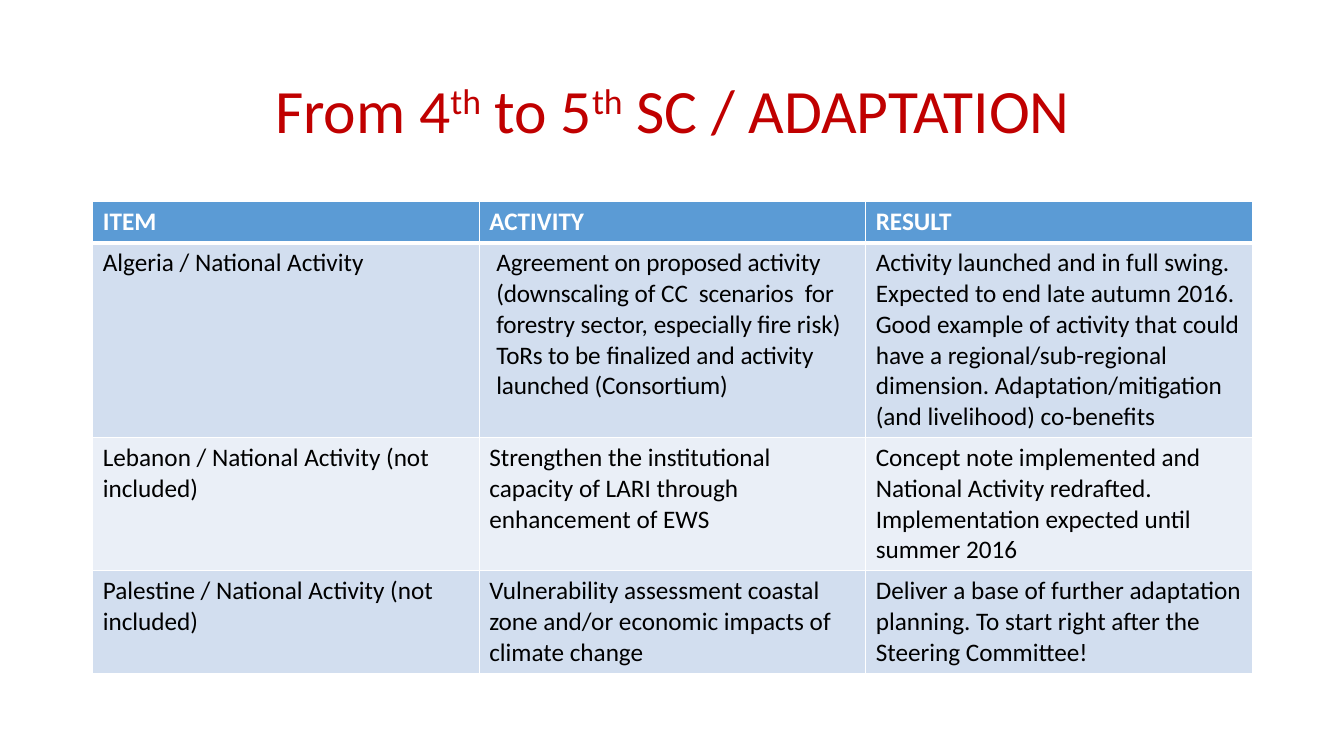
from lxml import etree
from pptx import Presentation
from pptx.dml.color import RGBColor
from pptx.enum.text import MSO_ANCHOR, PP_ALIGN
from pptx.oxml.ns import qn
from pptx.util import Inches, Pt

FONT = "Calibri"
RED = RGBColor(0xC0, 0x00, 0x00)
BLACK = RGBColor(0x00, 0x00, 0x00)
WHITE = RGBColor(0xFF, 0xFF, 0xFF)
HEADER_BLUE = RGBColor(0x5B, 0x9B, 0xD5)
BANDS = (RGBColor(0xEA, 0xEF, 0xF7), RGBColor(0xD2, 0xDE, 0xEF))
CENTER = PP_ALIGN.CENTER
MIDDLE = MSO_ANCHOR.MIDDLE
TITLE_ONLY = 5
TIGHT = -10  # hundredths of a point
RAISED = 30000  # thousandths of a percent

TITLE = [("From 4", 0), ("th", RAISED), (" to 5", 0), ("th", RAISED), (" SC / ADAPTATION", 0)]

# Each paragraph alternates between tight and normal letter spacing.
ALGERIA_ACTIVITY = [
    ["Agreement on proposed activity (downscaling ", "of ", "CC  scenarios  ", "for ",
     "forestry ", "sector, ", "especially fire ", "risk)"],
    ["ToRs to ", "be ", "finalized ", "and ", "activity launched (Consortium)"],
]
ROWS = [
    ("ITEM", "ACTIVITY", "RESULT"),
    ("Algeria / National Activity",
     ALGERIA_ACTIVITY,
     "Activity launched and in full swing. Expected to end late autumn 2016. "
     "Good example of activity that could have a regional/sub-regional dimension. "
     "Adaptation/mitigation (and livelihood) co-benefits"),
    ("Lebanon / National Activity (not included)",
     "Strengthen the institutional capacity of LARI through enhancement of EWS",
     "Concept note implemented and National Activity redrafted. "
     "Implementation expected until summer 2016"),
    ("Palestine / National Activity (not included)",
     "Vulnerability assessment coastal zone and/or economic impacts of climate change",
     "Deliver a base of further adaptation planning. "
     "To start right after the Steering Committee!"),
]
ROW_HEIGHTS = (0.41, 1.92, 1.32, 1.01)
LEFT, WIDTH = Inches(0.92), Inches(11.5)


def add_span(para, text, size, color, bold=False, spacing=0, baseline=0):
    span = para.add_run()
    span.text = text
    span.font.name = FONT
    span.font.size = Pt(size)
    span.font.bold = bold
    span.font.color.rgb = color
    properties = span._r.get_or_add_rPr()
    if spacing:
        properties.set("spc", str(spacing))
    if baseline:
        properties.set("baseline", str(baseline))


def add_borders(cell, is_header, below_header):
    """White rules on all sides, thicker under the header row."""
    properties = cell._tc.get_or_add_tcPr()
    widths = {"L": 1, "R": 1, "T": 3 if below_header else 1, "B": 3 if is_header else 1}
    for side, width in widths.items():
        line = etree.SubElement(properties, qn(f"a:ln{side}"), w=str(Pt(width)))
        fill = etree.SubElement(line, qn("a:solidFill"))
        etree.SubElement(fill, qn("a:srgbClr"), val=str(WHITE))


def fill_cell(cell, content, row):
    is_header = row == 0
    add_borders(cell, is_header, row == 1)
    cell.fill.solid()
    cell.fill.fore_color.rgb = HEADER_BLUE if is_header else BANDS[row % 2]
    frame = cell.text_frame
    if isinstance(content, str):
        add_span(frame.paragraphs[0], content, 18, WHITE if is_header else BLACK, is_header)
        return
    for number, parts in enumerate(content):
        para = frame.add_paragraph() if number else frame.paragraphs[0]
        para._p.get_or_add_pPr().set("marL", str(Inches(0.07)))
        if number == 0:
            para.space_before = Pt(0.3)
        for index, text in enumerate(parts):
            add_span(para, text, 18, BLACK, spacing=0 if index % 2 else TIGHT)


def add_title(slide):
    title = slide.shapes.title
    title.left, title.top, title.width, title.height = LEFT, Inches(0.4), WIDTH, Inches(1.45)
    title.text_frame.vertical_anchor = MIDDLE
    para = title.text_frame.paragraphs[0]
    para.alignment = CENTER
    para.line_spacing = 0.9
    for text, baseline in TITLE:
        add_span(para, text, 44, RED, spacing=TIGHT, baseline=baseline)


def add_activity_table(slide):
    columns = len(ROWS[0])
    table = slide.shapes.add_table(len(ROWS), columns, LEFT, Inches(2), WIDTH,
                                   Inches(sum(ROW_HEIGHTS))).table
    for column in table.columns:
        column.width = WIDTH // columns
    for row, (contents, height) in enumerate(zip(ROWS, ROW_HEIGHTS)):
        table.rows[row].height = Inches(height)
        for column, content in enumerate(contents):
            fill_cell(table.cell(row, column), content, row)


def main():
    deck = Presentation()
    deck.slide_width, deck.slide_height = Inches(13.33), Inches(7.5)
    slide = deck.slides.add_slide(deck.slide_layouts[TITLE_ONLY])
    add_title(slide)
    add_activity_table(slide)
    deck.save("out.pptx")


if __name__ == "__main__":
    main()
